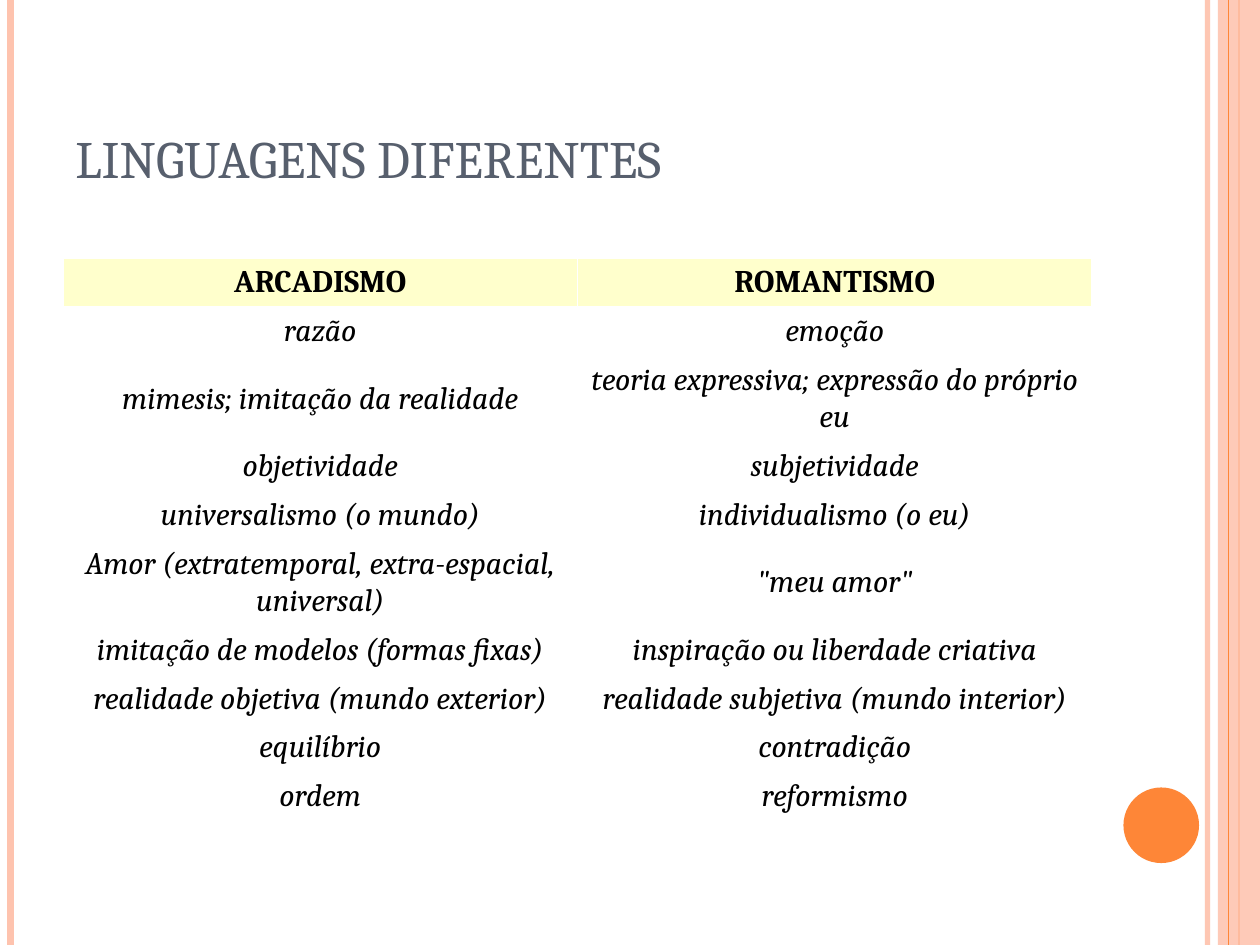
from lxml.etree import SubElement
from pptx import Presentation
from pptx.dml.color import RGBColor
from pptx.enum.shapes import MSO_CONNECTOR, MSO_SHAPE
from pptx.enum.text import MSO_ANCHOR, PP_ALIGN
from pptx.oxml.ns import qn
from pptx.util import Pt

COLORS = {
    "peach": "FEC3AE",
    "orange": "FE8637",
    "slate": "575F6D",
    "black": "000000",
    "cream": "FFFFCC",
    "white": "FFFFFF",
}
FONT = "Cambria"
SLIDE_WIDTH, SLIDE_HEIGHT = 720, 540
LINE_HEIGHT, CELL_MARGIN = 20.6, 3.1

CONTRASTS = [
    ("ARCADISMO", "ROMANTISMO"),
    ("razão", "emoção"),
    ("mimesis; imitação da realidade", "teoria expressiva; expressão do próprio eu"),
    ("objetividade", "subjetividade"),
    ("universalismo (o mundo)", "individualismo (o eu)"),
    ("Amor (extratemporal, extra-espacial, universal)", '"meu amor"'),
    ("imitação de modelos (formas fixas)", "inspiração ou liberdade criativa"),
    ("realidade objetiva (mundo exterior)", "realidade subjetiva (mundo interior)"),
    ("equilíbrio", "contradição"),
    ("ordem", "reformismo"),
]
TWO_LINE_ROWS = {2, 5}


def rgb(color):
    """Return the named colour of the palette."""
    return RGBColor.from_string(COLORS[color])


def set_alpha(shape, percent):
    """Make the first solid colour of a shape partly transparent."""
    solid_color = next(shape._element.spPr.iter(qn("a:srgbClr")))
    SubElement(solid_color, qn("a:alpha"), val=str(percent * 1000))


def write_text(frame, text, size, color="black", bold=False, italic=False,
               align=PP_ALIGN.LEFT):
    """Write one formatted paragraph into a text frame."""
    paragraph = frame.paragraphs[0]
    paragraph.alignment = align
    run = paragraph.add_run()
    run.text = text
    run.font.name = FONT
    run.font.size = Pt(size)
    run.font.bold = bold
    run.font.italic = italic
    run.font.color.rgb = rgb(color)


def add_stripe(slide, x, top, height, color, weight):
    """Draw a vertical line and return it."""
    stripe = slide.shapes.add_connector(
        MSO_CONNECTOR.STRAIGHT, Pt(x), Pt(top), Pt(x), Pt(top + height))
    stripe.line.color.rgb = rgb(color)
    stripe.line.width = Pt(weight)
    SubElement(stripe._element.spPr, qn("a:effectLst"))
    return stripe


def add_block(slide, preset, left, top, width, height, color):
    """Draw a plain filled shape and return it."""
    block = slide.shapes.add_shape(preset, Pt(left), Pt(top), Pt(width), Pt(height))
    block.shadow.inherit = False
    block.fill.solid()
    block.fill.fore_color.rgb = rgb(color)
    block.line.fill.background()
    return block


def add_frame(slide, left, top, width, height):
    """Decorate both sides of the box with stripes, a band and a disc."""
    right = left + width
    inner_stripe = add_stripe(slide, right - 30, top, height, "peach", 3)
    set_alpha(inner_stripe, 93)
    add_stripe(slide, left + 6, top, height, "peach", 4.5)
    add_stripe(slide, right - 12, top, height, "orange", 1.5)
    band = add_block(slide, MSO_SHAPE.RECTANGLE, right - 24, top, 24, height, "peach")
    set_alpha(band, 87)
    add_stripe(slide, right - 18, top, height, "orange", 0.75)
    add_block(slide, MSO_SHAPE.OVAL, right - 78, top + height - 90, 43.2, 43.2, "orange")


def add_title(slide, text, left, top, width, height):
    """Place the title at the bottom of its box."""
    frame = slide.shapes.add_textbox(Pt(left), Pt(top), Pt(width), Pt(height)).text_frame
    frame.word_wrap = True
    frame.vertical_anchor = MSO_ANCHOR.BOTTOM
    write_text(frame, text, 30, color="slate")


def add_contrast_table(slide, contrasts, left, top, width):
    """Set the two movements side by side under a header row."""
    heights = [LINE_HEIGHT * (2 if index in TWO_LINE_ROWS else 1) + 2 * CELL_MARGIN
               for index in range(len(contrasts))]
    table = slide.shapes.add_table(
        len(contrasts), 2, Pt(left), Pt(top), Pt(width), Pt(sum(heights))).table
    table.first_row = table.horz_banding = False
    for column in table.columns:
        column.width = Pt(width / 2)
    for index, (contrast, height) in enumerate(zip(contrasts, heights)):
        header = index == 0
        table.rows[index].height = Pt(height)
        for cell, text in zip(table.rows[index].cells, contrast):
            cell.margin_left = cell.margin_right = Pt(CELL_MARGIN)
            cell.margin_top = cell.margin_bottom = Pt(CELL_MARGIN)
            cell.vertical_anchor = MSO_ANCHOR.MIDDLE
            cell.fill.solid()
            cell.fill.fore_color.rgb = rgb("cream" if header else "white")
            write_text(cell.text_frame, text, 18, bold=header, italic=not header,
                       align=PP_ALIGN.CENTER)


def main():
    """Build the slide and save it."""
    presentation = Presentation()
    presentation.slide_width = Pt(SLIDE_WIDTH)
    presentation.slide_height = Pt(SLIDE_HEIGHT)
    slide = presentation.slides.add_slide(presentation.slide_layouts[6])
    add_frame(slide, 0, 0, SLIDE_WIDTH, SLIDE_HEIGHT)
    add_title(slide, "LINGUAGENS DIFERENTES", 36, 21.6, 588, 90)
    add_contrast_table(slide, CONTRASTS, 36, 147.6, 588)
    presentation.save("out.pptx")


if __name__ == "__main__":
    main()
